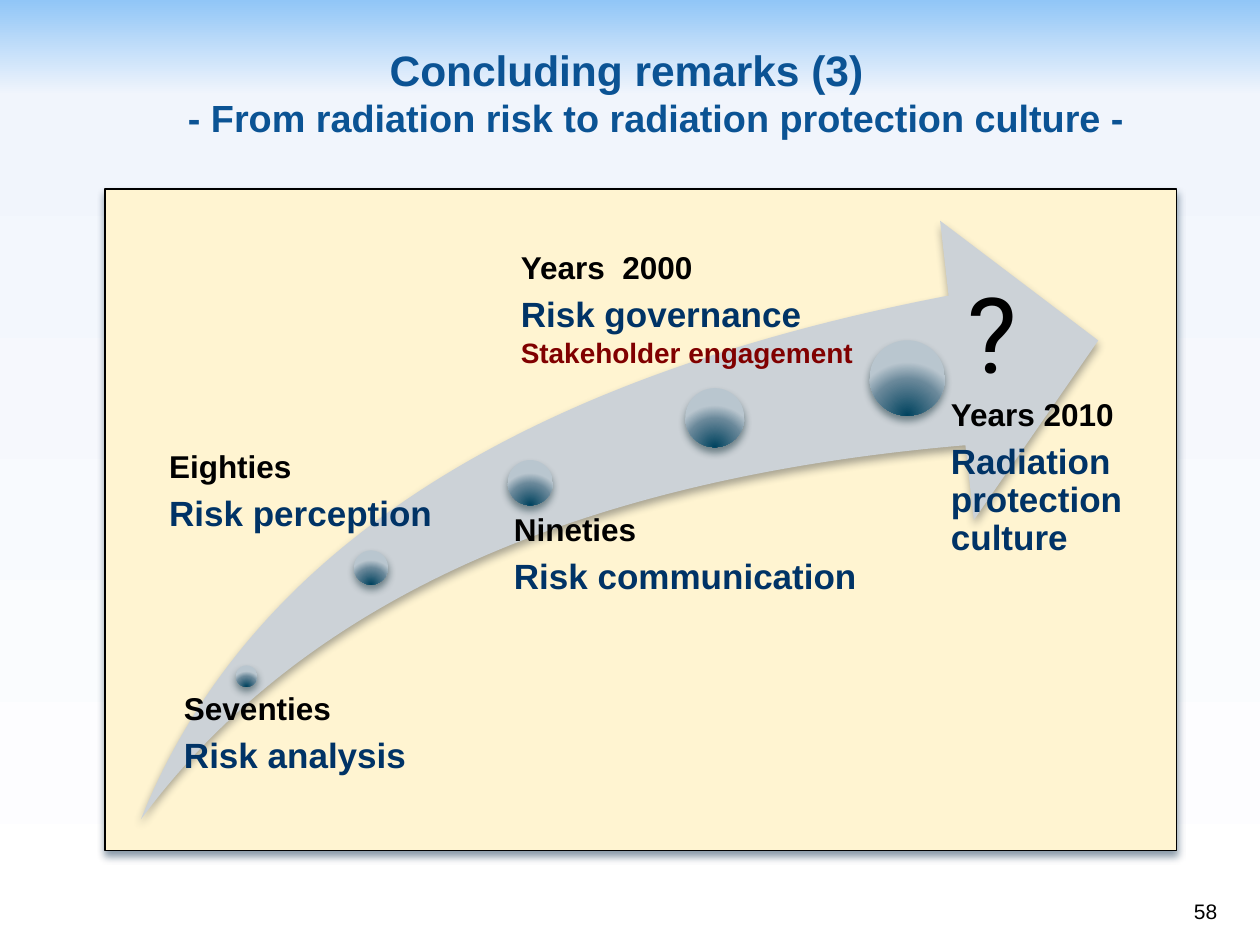
from lxml import etree
from pptx import Presentation
from pptx.dml.color import RGBColor
from pptx.enum.shapes import MSO_SHAPE as Shape
from pptx.enum.text import MSO_ANCHOR as Anchor, MSO_AUTO_SIZE as AutoSize, PP_ALIGN as Align
from pptx.oxml.ns import qn
from pptx.util import Cm, Pt

COLORS = {
    "title": "0B5394", "black": "000000", "navy": "003366", "maroon": "800000",
    "panel": "FFF4D1", "arrow": "CCD2D7",
    "panel_shadow": "042747", "arrow_shadow": "484A4C", "dot_shadow": "00232C",
}
SKY = [(0, "91C6F7"), (10, "F1F5FC"), (100, "FFFFFF")]
BALL = [(0, "00435F"), (68, "69889A"), (100, "B9C6CF")]


def rgb(name):
    return RGBColor.from_string(COLORS[name])


def add_run(p, text, size=18, color="black", bold=True, font="Arial"):
    r = p.add_run()
    r.text = text
    r.font.size, r.font.bold, r.font.name = Pt(size), bold, font
    r.font.color.rgb = rgb(color)
    return r


def set_gradient(fill, root, stops, circle=False):
    """Fill with any number of stops, top to bottom or around a low centre."""
    fill.gradient()
    grad = root.find(".//" + qn("a:gradFill"))
    for child in list(grad):
        grad.remove(child)
    gs_list = etree.SubElement(grad, qn("a:gsLst"))
    for pos, color in stops:
        gs = etree.SubElement(gs_list, qn("a:gs"), pos=str(pos * 1000))
        etree.SubElement(gs, qn("a:srgbClr"), val=color)
    if circle:
        around = etree.SubElement(grad, qn("a:path"), path="circle")
        etree.SubElement(around, qn("a:fillToRect"),
                         l="50000", t="130000", r="50000", b="-30000")
    else:
        etree.SubElement(grad, qn("a:lin"), ang="5400000", scaled="0")


class RiskSlide:
    def __init__(self, prs):
        self.s = prs.slides.add_slide(prs.slide_layouts[5])
        set_gradient(self.s.background.fill, self.s.element, SKY)

    def shape(self, kind, box, shadow, fill=None, line=None):
        sp = self.s.shapes.add_shape(kind, *map(Cm, box))
        if fill:
            sp.fill.solid()
            sp.fill.fore_color.rgb = rgb(fill)
        if line:
            sp.line.color.rgb, sp.line.width = rgb(line), Pt(0.75)
        else:
            sp.line.fill.background()
        sp.shadow.inherit = False
        effects = sp.element.spPr.find(qn("a:effectLst"))
        outer = etree.SubElement(effects, qn("a:outerShdw"), blurRad=str(Pt(4.5)),
                                 dist=str(Pt(3)), dir="5400000", rotWithShape="0")
        clr = etree.SubElement(outer, qn("a:srgbClr"), val=COLORS[shadow])
        etree.SubElement(clr, qn("a:alpha"), val="48000")
        return sp

    def dot(self, x, y, size):
        box = (x - size / 2, y - size / 2, size, size)
        sp = self.shape(Shape.OVAL, box, "dot_shadow")
        set_gradient(sp.fill, sp.element.spPr, BALL, circle=True)

    def text_box(self, box):
        tf = self.s.shapes.add_textbox(*map(Cm, box)).text_frame
        tf.word_wrap = True
        return tf

    def label(self, box, inset, lines):
        tf = self.text_box(box)
        tf.margin_left = Cm(inset)
        tf.margin_top = tf.margin_right = tf.margin_bottom = 0
        for i, (text, size, color, after) in enumerate(lines):
            p = tf.add_paragraph() if i else tf.paragraphs[0]
            p.line_spacing, p.space_after = 0.9, Pt(after)
            add_run(p, text, size=size, color=color)

    def title(self, box, first, second):
        sp = self.s.shapes.title
        sp.left, sp.top, sp.width, sp.height = map(Cm, box)
        tf = sp.text_frame
        tf.word_wrap, tf.auto_size = True, AutoSize.NONE
        tf.vertical_anchor = Anchor.MIDDLE
        tf.margin_left = tf.margin_right = tf.margin_bottom = 0
        tf.margin_top = Cm(0.13)
        p = tf.paragraphs[0]
        p.alignment = Align.CENTER
        pPr = p._p.get_or_add_pPr()
        pPr.set("marL", str(Cm(0.96)))
        pPr.set("indent", str(Cm(-0.96)))
        add_run(p, first, size=24.3, color="title")
        p.add_line_break()
        add_run(p, second, size=21.6, color="title")

    def note(self, box, text, align=Align.LEFT, anchor=Anchor.TOP, **style):
        tf = self.text_box(box)
        tf.vertical_anchor = anchor
        tf.paragraphs[0].alignment = align
        add_run(tf.paragraphs[0], text, bold=False, **style)


def stage(era, theme):
    return [(era, 18, "black", 6.3), (theme, 20, "navy", 6.3)]


# Each stage: dot centre and size, label box, label inset, lines
STAGES = [
    ((4.97, 13.63, 0.43), (3.48, 13.97, 6.17, 1.78), 0.23,
     stage("Seventies", "Risk analysis")),
    ((7.48, 11.44, 0.69), (3.05, 9.09, 6.38, 2.95), 0.36,
     stage("Eighties", "Risk perception")),
    ((10.69, 9.73, 0.91), (9.88, 10.36, 7.8, 2.95), 0.48,
     stage("Nineties", "Risk communication")),
    ((14.41, 8.42, 1.19), (9.86, 5.08, 11.1, 3), 0.64,
     [("Years  2000", 18, "black", 6.3), ("Risk governance", 20, "navy", 2.4),
      ("Stakeholder engagement", 16, "maroon", 2.4)]),
    ((18.29, 7.62, 1.52), (18.36, 8.05, 4.7, 5.08), 0.81,
     stage("Years 2010", "Radiation protection  culture")),
]


def main():
    prs = Presentation()
    prs.slide_width, prs.slide_height = Cm(25.4), Cm(19.05)
    slide = RiskSlide(prs)

    # Title
    slide.title((0.05, 0.84, 25.4, 1.9), "Concluding remarks (3) ",
                "- From radiation risk to radiation protection culture -")

    # Panel and rising arrow
    slide.shape(Shape.RECTANGLE, (2.12, 3.81, 21.6, 13.34), "panel_shadow",
                fill="panel", line="black")
    arrow = slide.shape(Shape.SWOOSH_ARROW, (2.84, 4.45, 19.3, 12.07),
                        "arrow_shadow", fill="arrow")
    arrow.adjustments[0] = arrow.adjustments[1] = 0.25

    # Stages along the arrow
    for dot, box, inset, lines in STAGES:
        slide.dot(*dot)
        slide.label(box, inset, lines)

    # Page number and open question
    slide.note((19.51, 17.48, 5.28, 1.27), "58", size=12,
               align=Align.RIGHT, anchor=Anchor.BOTTOM)
    slide.note((19.25, 5.28, 1.9, 2.82), "?", size=60, font="Roboto")

    prs.save("out.pptx")


if __name__ == "__main__":
    main()
